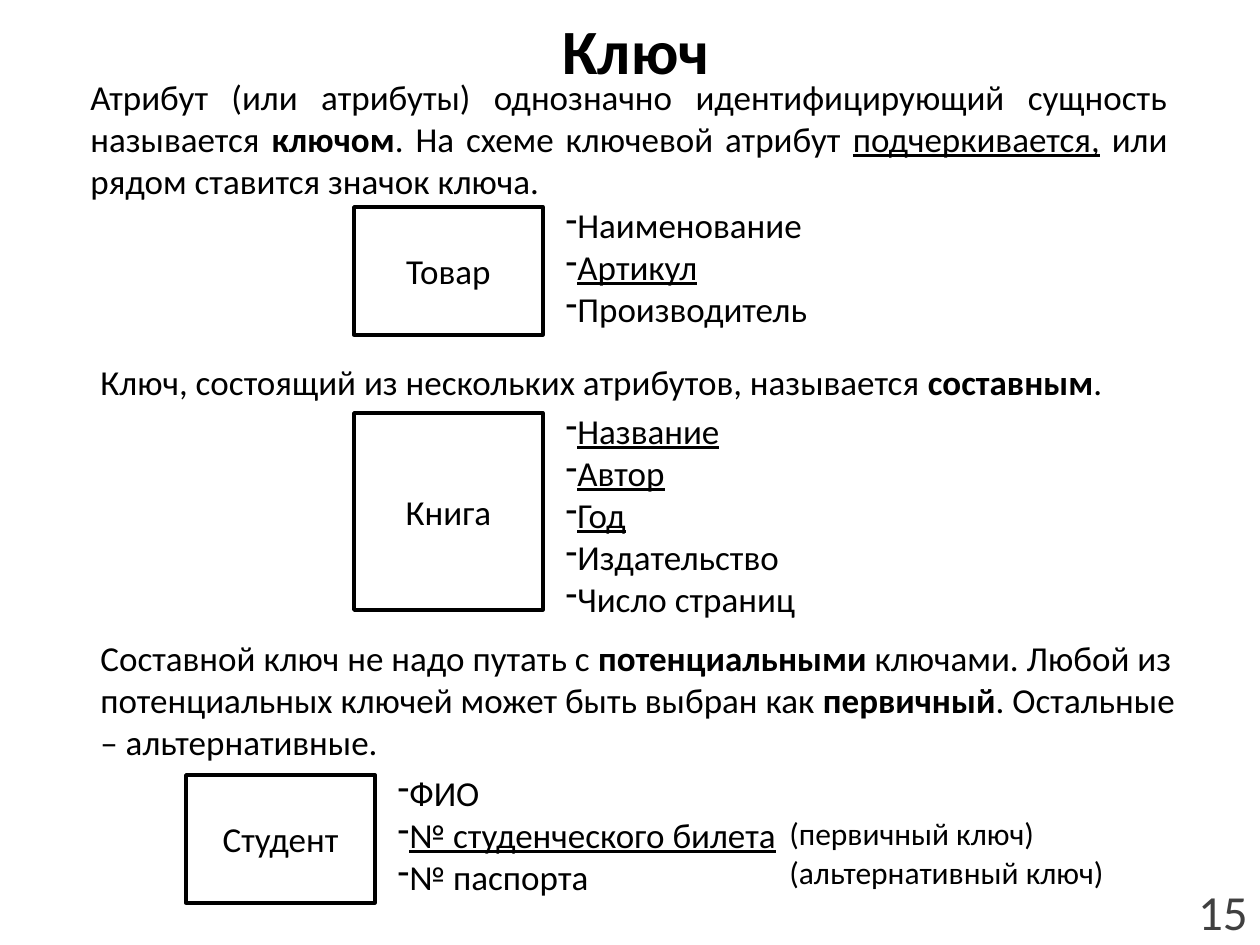
"""Builds the slide about entity keys."""
import pptx
import pptx.dml.color
import pptx.enum.shapes
import pptx.enum.text
import pptx.util
from lxml import etree

PX_PER_INCH = 126
FONT = "Calibri"
COLORS = {"ink": "000000", "paper": "FFFFFF", "number": "404040"}
ALIGN = pptx.enum.text.PP_ALIGN
MIDDLE = pptx.enum.text.MSO_ANCHOR.MIDDLE
ENTITY_WIDTH = 189
ROW_HEIGHT = 42
LIST_PADDING = 14


def px(length):
    """Turn pixels into EMU."""
    return pptx.util.Emu(round(length * pptx.util.Inches(1) / PX_PER_INCH))


def rgb(name):
    """Look up a colour by its role."""
    return pptx.dml.color.RGBColor.from_string(COLORS[name])


def add_runs(paragraph, runs, size=20, color="ink"):
    """Add (text, style) runs, where style is "", "bold" or "underline"."""
    for text, style in runs:
        run = paragraph.add_run()
        run.text = text
        run.font.name = FONT
        run.font.size = pptx.util.Pt(size)
        run.font.color.rgb = rgb(color)
        if style:
            setattr(run.font, style, True)


def add_text(slide, box, runs, align=ALIGN.LEFT, size=20, color="ink", anchor=None, wrap=True):
    """Add a one-paragraph text box."""
    frame = slide.shapes.add_textbox(*map(px, box)).text_frame
    frame.word_wrap = wrap
    if anchor is not None:
        frame.vertical_anchor = anchor
    paragraph = frame.paragraphs[0]
    paragraph.alignment = align
    add_runs(paragraph, runs, size, color)


def add_dash(paragraph):
    """Give a paragraph a dash bullet."""
    properties = paragraph._p.get_or_add_pPr()
    properties.set("marL", "0")
    properties.set("indent", str(pptx.util.Inches(0.09)))
    bullet = etree.SubElement(properties, pptx.oxml.ns.qn("a:buChar"))
    bullet.set("char", "-")


def add_attributes(slide, left, top, width, attributes):
    """Add the dashed list of an entity's attributes."""
    height = LIST_PADDING + ROW_HEIGHT * len(attributes)
    frame = slide.shapes.add_textbox(*map(px, (left, top, width, height))).text_frame
    frame.word_wrap = True
    for index, attribute in enumerate(attributes):
        paragraph = frame.add_paragraph() if index else frame.paragraphs[0]
        paragraph.alignment = ALIGN.JUSTIFY
        add_dash(paragraph)
        add_runs(paragraph, [attribute])


def add_entity(slide, left, top, height, name, list_width, attributes):
    """Add an entity rectangle with its attributes on the right."""
    entity = slide.shapes.add_shape(
        pptx.enum.shapes.MSO_SHAPE.RECTANGLE, *map(px, (left, top, ENTITY_WIDTH, height)))
    entity.shadow.inherit = False
    entity.fill.solid()
    entity.fill.fore_color.rgb = rgb("paper")
    entity.line.color.rgb = rgb("ink")
    entity.line.width = pptx.util.Pt(2)
    frame = entity.text_frame
    frame.margin_left = frame.margin_right = frame.margin_top = frame.margin_bottom = 0
    frame.vertical_anchor = MIDDLE
    frame.paragraphs[0].alignment = ALIGN.CENTER
    add_runs(frame.paragraphs[0], [(name, "")])
    add_attributes(slide, left + ENTITY_WIDTH - 1, top - 10, list_width, attributes)


def main():
    """Build and save the slide."""
    deck = pptx.Presentation()
    deck.slide_width, deck.slide_height = px(1260), px(945)
    slide = deck.slides.add_slide(deck.slide_layouts[6])

    add_text(slide, (69, 0, 1134, 98), [("Ключ", "bold")], ALIGN.CENTER, 36, anchor=MIDDLE)
    add_text(slide, (1152, 876, 108, 69), [("15", "")], ALIGN.RIGHT, 28, "number", MIDDLE)

    add_text(slide, (78, 69, 1102, 140), [
        ("Атрибут (или атрибуты) однозначно идентифицирующий сущность называется ", ""),
        ("ключом", "bold"),
        (". На схеме ключевой атрибут ", ""),
        ("подчеркивается,", "underline"),
        (" или рядом ставится значок ключа.", ""),
    ], ALIGN.JUSTIFY)
    add_entity(slide, 354, 207, 128, "Товар", 286, [
        ("Наименование", ""), ("Артикул", "underline"), ("Производитель", "")])

    add_text(slide, (88, 354, 1102, 55), [
        ("Ключ, состоящий из нескольких атрибутов, называется ", ""),
        ("составным", "bold"),
        (".", ""),
    ])
    add_entity(slide, 354, 413, 197, "Книга", 286, [
        ("Название", "underline"), ("Автор", "underline"), ("Год", "underline"),
        ("Издательство", ""), ("Число страниц", "")])

    add_text(slide, (88, 630, 1102, 140), [
        ("Составной ключ не надо путать с ", ""),
        ("потенциальными", "bold"),
        (" ключами. Любой из потенциальных ключей может быть выбран как ", ""),
        ("первичный", "bold"),
        (". Остальные – альтернативные.", ""),
    ])
    add_entity(slide, 186, 775, 128, "Студент", 423, [
        ("ФИО", ""), ("№ студенческого билета", "underline"), ("№ паспорта", "")])

    for top, width, note in ((847, 344, "(альтернативный ключ)"), (808, 273, "(первичный ключ)")):
        add_text(slide, (777, top, width, 50), [(note, "")], ALIGN.JUSTIFY, 18, wrap=False)

    deck.save("out.pptx")


if __name__ == "__main__":
    main()
